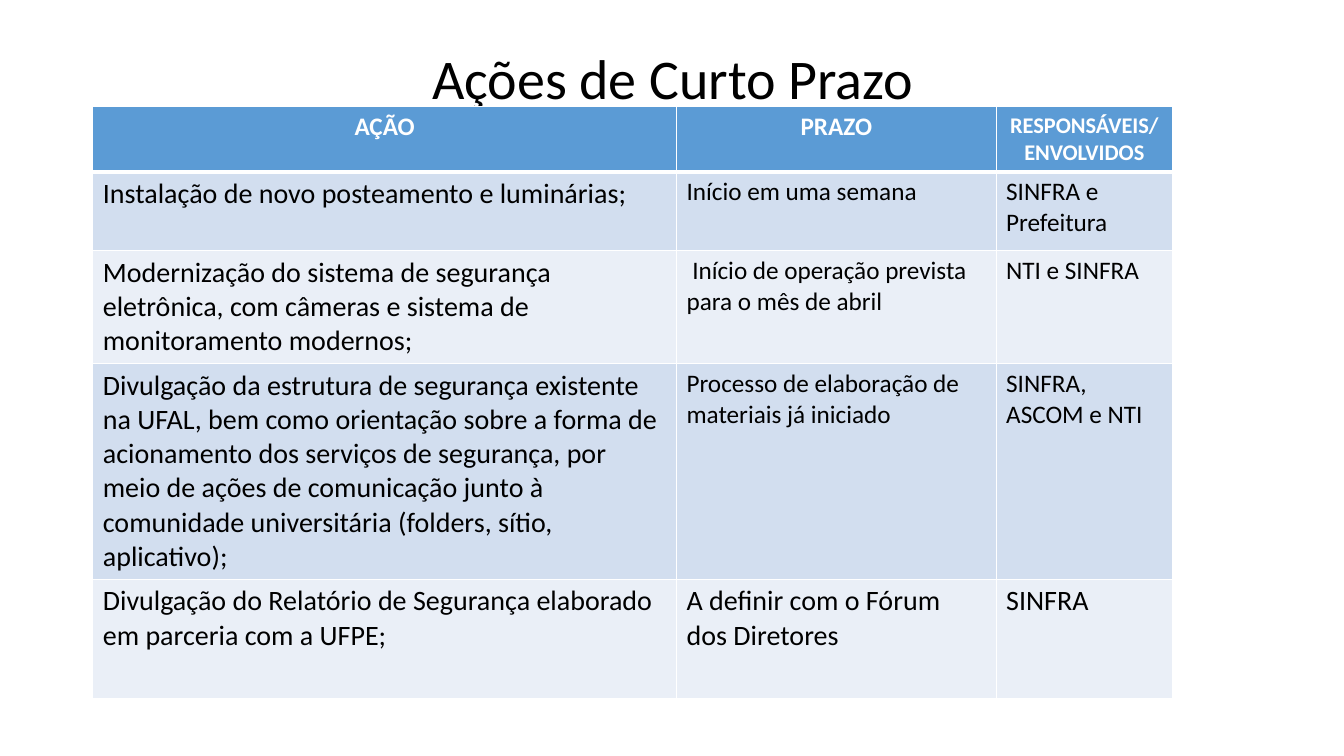
from dataclasses import dataclass

from lxml.etree import SubElement
from pptx import Presentation
from pptx.dml.color import RGBColor
from pptx.enum.text import MSO_ANCHOR, MSO_AUTO_SIZE, PP_ALIGN
from pptx.oxml.ns import qn
from pptx.slide import Slide
from pptx.table import _Cell as Cell
from pptx.text.text import TextFrame
from pptx.util import Emu, Pt

EMU_PER_PX = 9144  # 100 px to the inch
FONT = "Calibri"
BLACK = RGBColor(0x00, 0x00, 0x00)
WHITE = RGBColor(0xFF, 0xFF, 0xFF)
HEADER_BLUE = RGBColor(0x5B, 0x9B, 0xD5)
BAND_DARK = RGBColor(0xD2, 0xDE, 0xEF)
BAND_LIGHT = RGBColor(0xEA, 0xEF, 0xF7)

COLUMN_WIDTHS = (579, 317, 175)
THIN_BORDER, HEADER_BORDER = 1, 3


@dataclass(frozen=True)
class ActionRow:
    height: int
    texts: tuple[str, str, str]
    sizes: tuple[int, int, int] = (20, 18, 18)


ROWS = (
    ActionRow(59, ("AÇÃO", "PRAZO", "RESPONSÁVEIS/ENVOLVIDOS"), (18, 18, 16)),
    ActionRow(78, ("Instalação de novo posteamento e luminárias;",
                   "Início em uma semana", "SINFRA e Prefeitura")),
    ActionRow(104, ("Modernização do sistema de segurança eletrônica, com câmeras "
                    "e sistema de monitoramento modernos;",
                    " Início de operação prevista para o mês de abril",
                    "NTI e SINFRA")),
    ActionRow(163, ("Divulgação da estrutura de segurança existente na UFAL, bem como "
                    "orientação sobre a forma de acionamento dos serviços de segurança, "
                    "por meio de ações de comunicação junto à comunidade universitária "
                    "(folders, sítio, aplicativo);",
                    "Processo de elaboração de materiais já iniciado",
                    "SINFRA, ASCOM e NTI")),
    ActionRow(118, ("Divulgação do Relatório de Segurança elaborado em parceria com a UFPE;",
                    "A definir com o Fórum dos Diretores", "SINFRA"), (20, 20, 20)),
)


def px(length: int) -> Emu:
    return Emu(length * EMU_PER_PX)


def write_text(frame: TextFrame, text: str, size: int, color: RGBColor,
               alignment: PP_ALIGN, bold: bool = False) -> None:
    paragraph = frame.paragraphs[0]
    paragraph.alignment = alignment
    run = paragraph.add_run()
    run.text = text
    run.font.name = FONT
    run.font.size = Pt(size)
    run.font.bold = bold
    run.font.color.rgb = color


def set_borders(cell: Cell, top: int, bottom: int) -> None:
    properties = cell._tc.get_or_add_tcPr()
    widths = {"a:lnL": THIN_BORDER, "a:lnR": THIN_BORDER, "a:lnT": top, "a:lnB": bottom}
    for tag, width in widths.items():
        line = SubElement(properties, qn(tag), w=str(Pt(width)))
        fill = SubElement(line, qn("a:solidFill"))
        SubElement(fill, qn("a:srgbClr"), val=str(WHITE))


def add_title(slide: Slide) -> None:
    title = slide.shapes.title
    title.left, title.top, title.width, title.height = px(92), px(40), px(1150), px(82)
    frame = title.text_frame
    frame.auto_size = MSO_AUTO_SIZE.NONE
    frame.vertical_anchor = MSO_ANCHOR.MIDDLE
    write_text(frame, "Ações de Curto Prazo", 40, BLACK, PP_ALIGN.CENTER)
    frame.paragraphs[0].line_spacing = 0.9


def add_action_table(slide: Slide) -> None:
    height = sum(row.height for row in ROWS)
    table = slide.shapes.add_table(len(ROWS), len(COLUMN_WIDTHS), px(92), px(106),
                                   px(sum(COLUMN_WIDTHS)), px(height)).table
    for column, width in zip(table.columns, COLUMN_WIDTHS):
        column.width = px(width)
    for index, row in enumerate(ROWS):
        table.rows[index].height = px(row.height)
        is_header = index == 0
        band = BAND_DARK if index % 2 else BAND_LIGHT
        for column_index, (text, size) in enumerate(zip(row.texts, row.sizes)):
            cell = table.cell(index, column_index)
            set_borders(cell, HEADER_BORDER if index == 1 else THIN_BORDER,
                        HEADER_BORDER if is_header else THIN_BORDER)
            cell.fill.solid()
            cell.fill.fore_color.rgb = HEADER_BLUE if is_header else band
            write_text(cell.text_frame, text, size, WHITE if is_header else BLACK,
                       PP_ALIGN.CENTER if is_header else PP_ALIGN.LEFT, is_header)


def main() -> None:
    presentation = Presentation()
    presentation.slide_width, presentation.slide_height = px(1333), px(750)
    slide = presentation.slides.add_slide(presentation.slide_layouts[5])
    # Title, then the table that overlaps its lower edge
    add_title(slide)
    add_action_table(slide)
    presentation.save("out.pptx")


if __name__ == "__main__":
    main()
